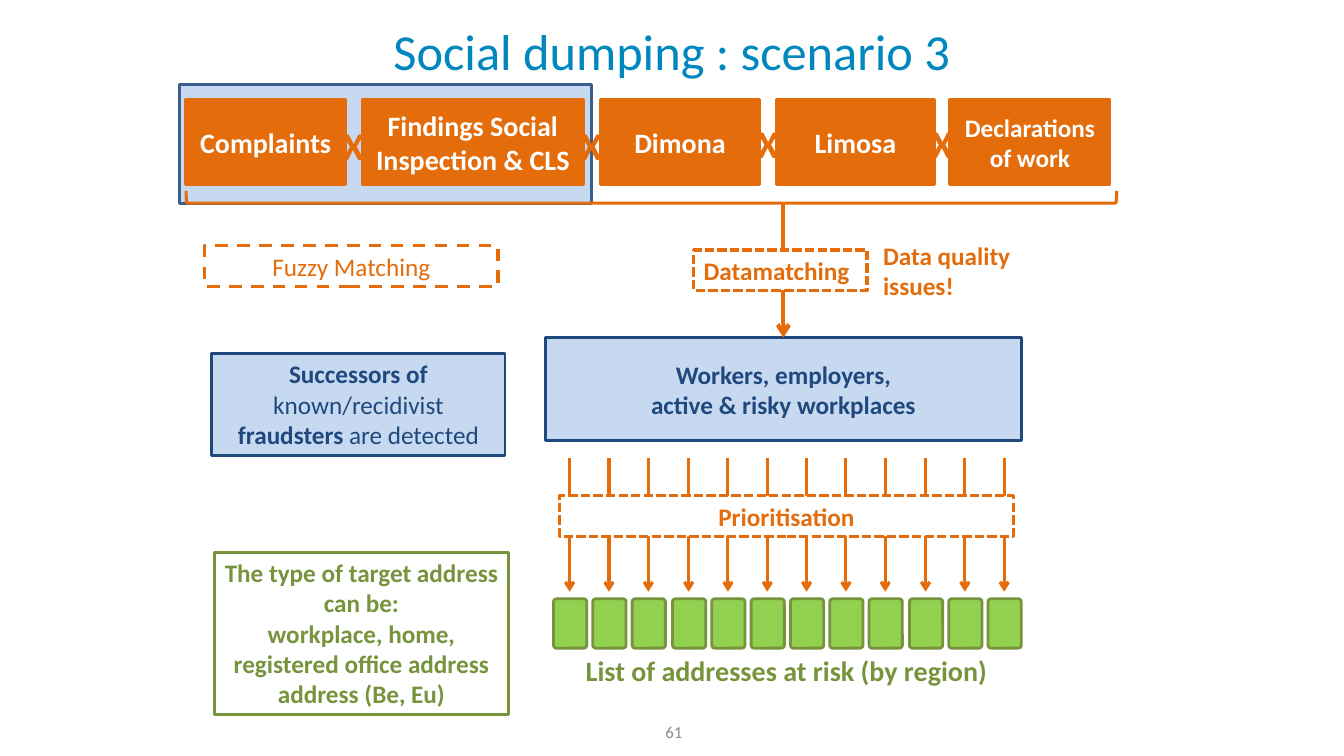
from dataclasses import dataclass

from lxml import etree
from pptx import Presentation
from pptx.dml.color import RGBColor
from pptx.enum.dml import MSO_LINE
from pptx.enum.shapes import MSO_CONNECTOR, MSO_SHAPE
from pptx.enum.text import MSO_ANCHOR, MSO_AUTO_SIZE, PP_ALIGN
from pptx.oxml.ns import qn
from pptx.util import Pt

PX = 9144  # EMU per px, 100 px to the inch
TITLE_ONLY = 5
TOP_SIDE = 0
STRAIGHT = MSO_CONNECTOR.STRAIGHT
RECTANGLE = MSO_SHAPE.RECTANGLE
ROUNDED = MSO_SHAPE.ROUNDED_RECTANGLE
BRACKET = MSO_SHAPE.RIGHT_BRACKET
SHORT_DASH, DASH = MSO_LINE.SQUARE_DOT, MSO_LINE.DASH
LEFT, CENTER = PP_ALIGN.LEFT, PP_ALIGN.CENTER
TOP, MIDDLE = MSO_ANCHOR.TOP, MSO_ANCHOR.MIDDLE


@dataclass(frozen=True)
class Theme:
    font: str = "Calibri"
    title: str = "0087BE"
    orange: str = "E46C0A"
    navy: str = "1F497D"
    frame: str = "3A5F8C"
    pale_blue: str = "C6D9F1"
    olive: str = "77933C"
    lime: str = "92D050"
    gray: str = "8C8C8C"
    white: str = "FFFFFF"
    title_size: int = 36
    cross_size: int = 28
    large: int = 20
    body: int = 18
    small: int = 12


theme = Theme()
presentation = Presentation()
presentation.slide_width, presentation.slide_height = 1333 * PX, 750 * PX
slide = presentation.slides.add_slide(presentation.slide_layouts[TITLE_ONLY])


def add_box(bounds, lines=(), color=theme.orange, size=theme.body, bold=True,
            align=CENTER, anchor=TOP, wrap=True, preset=RECTANGLE,
            fill=None, line=None, weight=2, dash=None):
    """Add a shape, or a text box if preset is None; a line is a string or (text, bold) runs."""
    emu = [length * PX for length in bounds]
    if preset is None:
        shape = slide.shapes.add_textbox(*emu)
    else:
        shape = slide.shapes.add_shape(preset, *emu)
        shape.shadow.inherit = False
        if fill:
            shape.fill.solid()
            shape.fill.fore_color.rgb = RGBColor.from_string(fill)
        else:
            shape.fill.background()
        shape.line.color.rgb = RGBColor.from_string(line)
        shape.line.width = Pt(weight)
        if dash:
            shape.line.dash_style = dash
    frame = shape.text_frame
    frame.word_wrap = wrap
    frame.vertical_anchor = anchor
    for index, content in enumerate(lines):
        paragraph = frame.add_paragraph() if index else frame.paragraphs[0]
        paragraph.alignment = align
        font = paragraph.font
        font.name, font.size, font.bold = theme.font, Pt(size), bold
        font.color.rgb = RGBColor.from_string(color)
        if isinstance(content, str):
            paragraph.add_run().text = content
        else:
            for text, run_bold in content:
                run = paragraph.add_run()
                run.text, run.font.bold = text, run_bold
    return shape


def add_down_arrow(x, top, bottom, weight):
    arrow = slide.shapes.add_connector(STRAIGHT, x * PX, top * PX, x * PX, bottom * PX)
    arrow.line.color.rgb = RGBColor.from_string(theme.orange)
    arrow.line.width = Pt(weight)
    etree.SubElement(arrow.line._get_or_add_ln(), qn("a:tailEnd"), type="arrow")
    etree.SubElement(arrow._element.spPr, qn("a:effectLst"))
    return arrow


# Title
title = slide.shapes.title
title.left, title.top, title.width, title.height = 21 * PX, 0, 1291 * PX, 99 * PX
title.text_frame.text = "Social dumping : scenario 3"
title.text_frame.auto_size = MSO_AUTO_SIZE.NONE
title.text_frame.vertical_anchor = MIDDLE
heading = title.text_frame.paragraphs[0]
heading.alignment = CENTER
heading.font.name, heading.font.size = theme.font, Pt(theme.title_size)
heading.font.color.rgb = RGBColor.from_string(theme.title)

# Data sources, joined by crosses
add_box((178, 84, 409, 118), fill=theme.pale_blue, line=theme.frame)
sources = [
    ("Dimona", 596, 157, theme.large),
    ("Limosa", 770, 157, theme.large),
    ("Declarations of work", 942, 159, theme.body),
    ("Findings Social Inspection & CLS", 359, 220, theme.large),
    ("Complaints", 184, 159, theme.large),
]
for name, left, width, size in sources:
    add_box((left, 99, width, 84), [name], theme.white, size, anchor=MIDDLE,
            fill=theme.orange, line=theme.orange)
for left, top in [(330, 115), (566, 115), (741, 113), (914, 113)]:
    add_box((left, top, 42, 57), ["X"], size=theme.cross_size, align=LEFT,
            wrap=False, preset=None)

# Matching of the sources
bracket = add_box((640, -266, 12, 923), preset=BRACKET, line=theme.orange, weight=2.25)
bracket.rotation = 90
workers = add_box((541, 335, 472, 102),
                  ["Workers, employers,", "active & risky workplaces"], theme.navy,
                  anchor=MIDDLE, fill=theme.pale_blue, line=theme.navy)
matching_arrow = add_down_arrow(777, 202, 335, 3)
matching_arrow.end_connect(workers, TOP_SIDE)
add_box((688, 248, 172, 40), ["Datamatching"], align=LEFT, wrap=False,
        fill=theme.white, line=theme.orange, weight=2.25, dash=SHORT_DASH)
add_box((866, 233, 148, 71), ["Data quality", "issues!"], align=LEFT, wrap=False,
        preset=None)

# Prioritised addresses
ADDRESSES, FIRST_LEFT, LAST_LEFT = 12, 549, 980
for index in range(ADDRESSES):
    left = FIRST_LEFT + round((LAST_LEFT - FIRST_LEFT) * index / (ADDRESSES - 1))
    add_down_arrow(left + 16, 454, 587, 2.25)
    address = add_box((left, 594, 33, 49), preset=ROUNDED, fill=theme.lime,
                      line=theme.olive)
    address.adjustments[0] = 0.09
add_box((555, 492, 450, 40), ["Prioritisation"], fill=theme.white,
        line=theme.orange, weight=2.25, dash=SHORT_DASH)
add_box((549, 643, 462, 44), ["List of addresses at risk (by region)"], theme.olive,
        theme.large, preset=None)

# Remarks on the left
add_box((203, 244, 291, 40), ["Fuzzy Matching"], bold=False, line=theme.orange,
        weight=2.25, dash=DASH)
successors = [("Successors of ", True), ("known/recidivist ", False),
              ("fraudsters ", True), ("are detected", False)]
add_box((210, 351, 291, 101), [successors], theme.navy, fill=theme.pale_blue,
        line=theme.navy)
add_box((213, 548, 291, 161),
        ["The type of target address can be:",
         "workplace, home, registered office address", "address (Be, Eu)"],
        theme.olive, line=theme.olive)

# Page number
add_box((513, 706, 311, 40), ["61"], theme.gray, theme.small, bold=False,
        anchor=MIDDLE, preset=None)

presentation.save("out.pptx")
